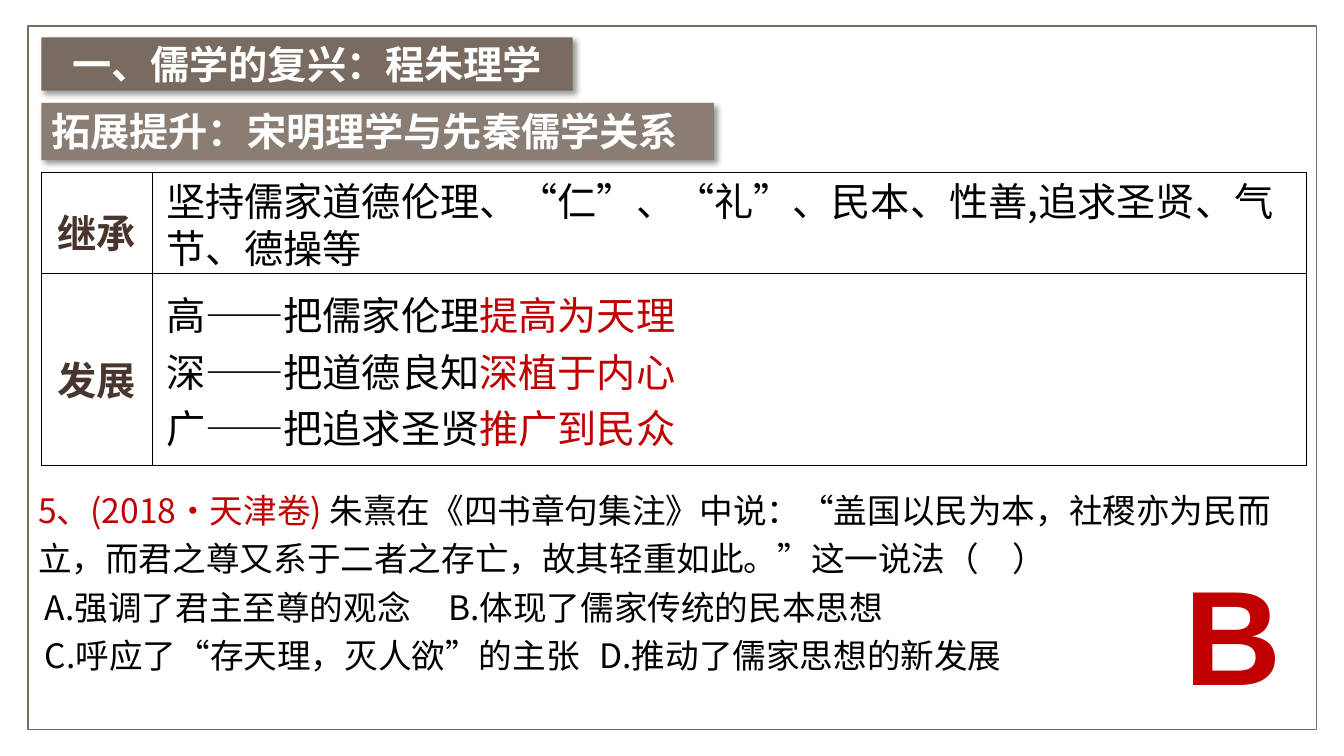
from lxml.etree import SubElement
from pptx import Presentation
from pptx.dml.color import RGBColor
from pptx.enum.shapes import MSO_SHAPE
from pptx.enum.text import MSO_ANCHOR, MSO_AUTO_SIZE, PP_ALIGN
from pptx.oxml.ns import qn
from pptx.util import Inches, Pt

COLORS = {
    "frame": "796B5F",
    "subtitle": "8A7E74",
    "label": "48352E",
    "accent": "C00000",
    "text": "000000",
    "light": "FFFFFF",
}
CJK = "Noto Sans CJK SC"


class Board:
    def __init__(self, deck):
        self.deck = deck
        self.slide = deck.slides.add_slide(deck.slide_layouts[5])

    def col(self, share):
        return int(self.deck.slide_width * share / 100)

    def row(self, share):
        return int(self.deck.slide_height * share / 100)

    def box(self, left, top, width, height):
        return self.col(left), self.row(top), self.col(width), self.row(height)

    def color(self, name):
        return RGBColor.from_string(COLORS[name])

    def style(self, run, size, color, bold=False, face=CJK):
        run.font.size = Pt(size)
        run.font.bold = bold
        run.font.name = face
        run.font.color.rgb = self.color(color)
        SubElement(run.font._element, qn("a:ea"), typeface=face)

    def fill_line(self, paragraph, parts, size, bold=False, face=CJK, align=PP_ALIGN.LEFT, spacing=1.0):
        paragraph.alignment = align
        paragraph.line_spacing = spacing
        for words, color in parts:
            run = paragraph.add_run()
            run.text = words
            self.style(run, size, color, bold, face)

    def banner(self, shape, fill, words, align, anchor):
        shape.fill.solid()
        shape.fill.fore_color.rgb = self.color(fill)
        shape.line.fill.background()
        effects = SubElement(shape._element.spPr, qn("a:effectLst"))
        shadow = SubElement(effects, qn("a:outerShdw"), blurRad=str(Pt(4)), dist=str(Pt(3)),
                            dir="2700000", algn="tl", rotWithShape="0")
        tint = SubElement(shadow, qn("a:srgbClr"), val=COLORS["text"])
        SubElement(tint, qn("a:alpha"), val="40000")
        frame = shape.text_frame
        frame.auto_size = MSO_AUTO_SIZE.NONE
        frame.vertical_anchor = anchor
        self.fill_line(frame.paragraphs[0], [(words, "light")], 28, True, align=align)

    def title(self, place, words):
        heading = self.slide.shapes.title
        heading.left, heading.top, heading.width, heading.height = self.box(*place)
        outline = SubElement(heading._element.spPr, qn("a:prstGeom"), prst="roundRect")
        SubElement(outline, qn("a:avLst"))
        self.banner(heading, "frame", words, PP_ALIGN.CENTER, MSO_ANCHOR.MIDDLE)

    def subtitle(self, place, words):
        bar = self.slide.shapes.add_shape(MSO_SHAPE.RECTANGLE, *self.box(*place))
        self.banner(bar, "subtitle", words, PP_ALIGN.LEFT, MSO_ANCHOR.TOP)

    def border(self, place):
        edge = self.slide.shapes.add_shape(MSO_SHAPE.RECTANGLE, *self.box(*place))
        edge.shadow.inherit = False
        edge.fill.background()
        edge.line.color.rgb = self.color("frame")
        edge.line.width = Pt(1)

    def table(self, left, top, widths, heights, labels):
        place = self.box(left, top, sum(widths), sum(heights))
        grid = self.slide.shapes.add_table(len(heights), len(widths), *place).table
        grid.first_row = grid.horz_banding = False
        for column, width in zip(grid.columns, widths):
            column.width = self.col(width)
        for line, height in zip(grid.rows, heights):
            line.height = self.row(height)
        for cell in grid.iter_cells():
            properties = cell._tc.get_or_add_tcPr()
            for side in ("lnL", "lnR", "lnT", "lnB"):
                rule = SubElement(properties, qn(f"a:{side}"), w=str(Pt(1)))
                ink = SubElement(rule, qn("a:solidFill"))
                SubElement(ink, qn("a:srgbClr"), val=COLORS["text"])
            cell.fill.background()
            cell.vertical_anchor = MSO_ANCHOR.MIDDLE
        for index, label in enumerate(labels):
            paragraph = grid.cell(index, 0).text_frame.paragraphs[0]
            self.fill_line(paragraph, [(label, "label")], 28, True, align=PP_ALIGN.CENTER, spacing=1.3)

    def text(self, place, lines, size, wrap=True, **look):
        frame = self.slide.shapes.add_textbox(*self.box(*place)).text_frame
        frame.word_wrap = wrap
        for index, parts in enumerate(lines):
            paragraph = frame.add_paragraph() if index else frame.paragraphs[0]
            self.fill_line(paragraph, parts, size, **look)
        return frame.paragraphs

    def tab(self, paragraph, indent, stop):
        properties = paragraph._p.get_or_add_pPr()
        properties.set("marL", str(self.col(indent)))
        properties.set("indent", "0")
        stops = SubElement(properties, qn("a:tabLst"))
        SubElement(stops, qn("a:tab"), pos=str(self.col(stop)), algn="l")


def main():
    deck = Presentation()
    deck.slide_width, deck.slide_height = Inches(13.33), Inches(7.5)
    board = Board(deck)
    board.title((3.08, 4.93, 39.53, 7.07), "一、儒学的复兴：程朱理学")
    board.border((2.1, 3.47, 95.87, 93.07))
    board.subtitle((3.08, 13.6, 50.04, 7.6), "拓展提升：宋明理学与先秦儒学关系")
    board.table(3.08, 22.8, (8.25, 85.9), (13.33, 25.5), ("继承", "发展"))

    inheritance = "坚持儒家道德伦理、“仁”、“礼”、民本、性善,追求圣贤、气节、德操等"
    board.text((11.63, 22.8, 85.67, 13.87), [[(inheritance, "text")]], 28)
    developments = (
        ("高——把儒家伦理", "提高为天理"),
        ("深——把道德良知", "深植于内心"),
        ("广——把追求圣贤", "推广到民众"),
    )
    board.text((11.63, 36.67, 83.27, 24),
               [[(start, "text"), (result, "accent")] for start, result in developments],
               28, spacing=1.2)

    question = (
        "朱熹在《四书章句集注》中说：“盖国以民为本，社稷亦为民而立，"
        "而君之尊又系于二者之存亡，故其轻重如此。”这一说法（　）"
    )
    options = (
        ("A.强调了君主至尊的观念\tB.体现了儒家传统的民本思想", 38),
        ("C.呼应了“存天理，灭人欲”的主张\tD.推动了儒家思想的新发展", 45),
    )
    lines = [[("5、(2018·天津卷) ", "accent"), (question, "text")]]
    lines += [[(words, "text")] for words, _ in options]
    paragraphs = board.text((2.1, 63.07, 95.2, 27.2), lines, 24, spacing=1.2)
    for paragraph, (_, stop) in zip(paragraphs[1:], options):
        board.tab(paragraph, 0.5, stop)

    board.text((87.4, 72.27, 8.7, 22.93), [[("B", "accent")]], 96, wrap=False,
               bold=True, face="Arial", align=PP_ALIGN.CENTER)
    deck.save("out.pptx")


if __name__ == "__main__":
    main()
